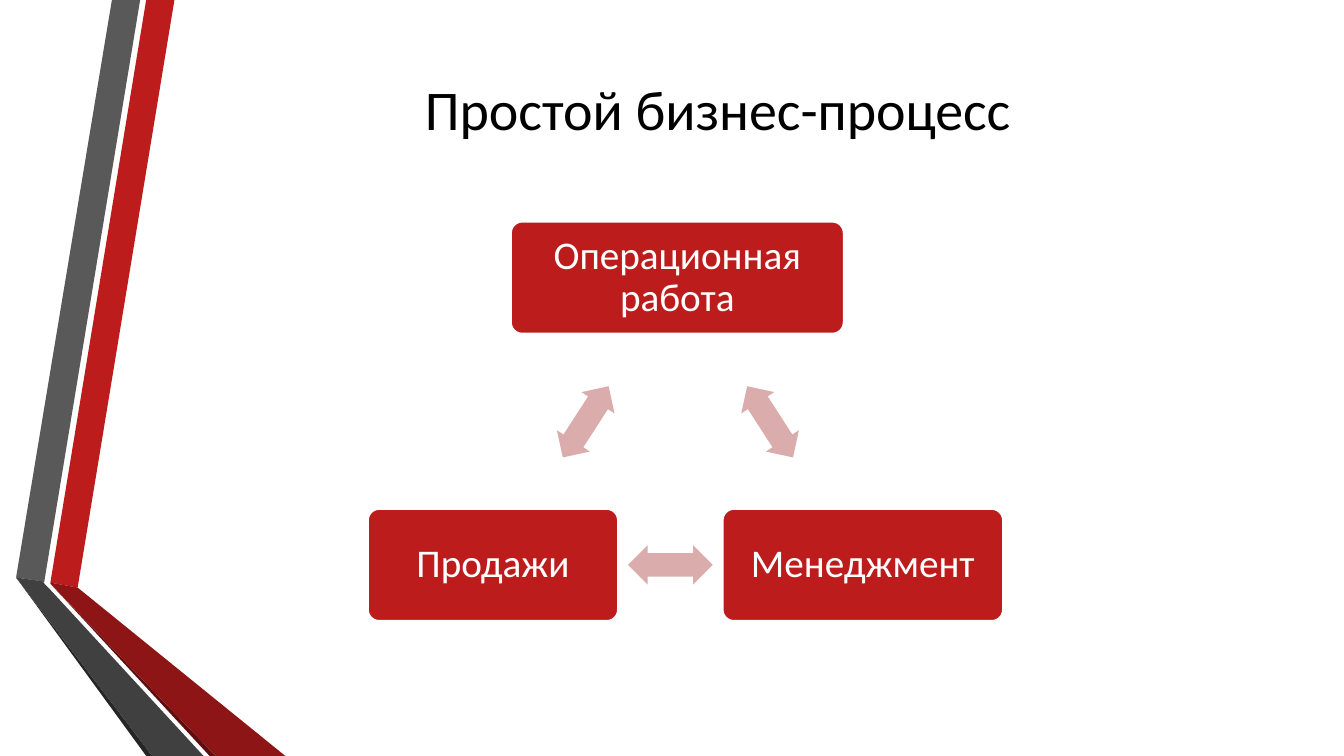
from dataclasses import dataclass

import pptx
import pptx.dml.color
import pptx.enum.shapes
import pptx.enum.text
import pptx.util

SHAPES = pptx.enum.shapes.MSO_SHAPE
SLIDE_WIDTH = pptx.util.Inches(13.333)
SLIDE_HEIGHT = pptx.util.Inches(7.5)


@dataclass(frozen=True)
class Theme:
    font: str = "Calibri"
    title_size: int = 40
    step_size: int = 28
    title_ink: str = "000000"
    white: str = "FFFFFF"
    red: str = "BC1C1C"
    red_fold: str = "8D1515"
    red_shade: str = "5E0E0E"
    gray: str = "595959"
    gray_fold: str = "404040"
    gray_shade: str = "262626"
    arrow: str = "DAACAC"


THEME = Theme()

# Ribbon corners, in percent of the slide's width and height
RIBBON = [
    (THEME.red, [(3.75, 77.07), (5.78, 77.73), (12.98, 0), (10.88, 0)]),
    (THEME.gray, [(10.43, 0), (8.33, 0), (1.2, 76.4), (3.3, 76.93)]),
    (THEME.gray_shade, [(1.2, 76.4), (10.88, 100), (11.33, 100)]),
    (THEME.red_shade, [(3.75, 77.2), (15.6, 100), (16.05, 100)]),
    (THEME.red_fold, [(3.75, 77.07), (3.75, 77.2), (16.05, 100), (21.23, 100), (5.78, 77.73)]),
    (THEME.gray_fold, [(15.15, 100), (3.6, 77.73), (3.23, 77.07), (3.3, 76.93),
                       (1.2, 76.4), (11.33, 100)]),
]

# Process layout, in percent: shared rows, sizes and the triangle's axis
TOP_ROW, ARROW_ROW, BOTTOM_ROW = 36.73, 55.8, 74.73
STEP_HEIGHT = 14.8
ARROW_SIZE = (6.3, 5.2)
ARROW_TILT = 57.2
STEPS = [
    ("Операционная работа", 50.4, TOP_ROW, 24.75),
    ("Менеджмент", 64.2, BOTTOM_ROW, 20.85),
    ("Продажи", 36.68, BOTTOM_ROW, 18.6),
]
LINKS = [
    (57.3, ARROW_ROW, ARROW_TILT),
    (49.88, BOTTOM_ROW, 180),
    (43.58, ARROW_ROW, 360 - ARROW_TILT),
]


def across(percent):
    return round(SLIDE_WIDTH * percent / 100)


def down(percent):
    return round(SLIDE_HEIGHT * percent / 100)


def centered(x, y, width, height):
    """Frame around a centre point, all in percent of the slide."""
    return across(x - width / 2), down(y - height / 2), across(width), down(height)


def paint(shape, color):
    shape.shadow.inherit = False
    shape.fill.solid()
    shape.fill.fore_color.rgb = pptx.dml.color.RGBColor.from_string(color)
    shape.line.fill.background()


def write(frame, words, size, color):
    frame.word_wrap = True
    frame.vertical_anchor = pptx.enum.text.MSO_ANCHOR.MIDDLE
    paragraph = frame.paragraphs[0]
    paragraph.text = words
    paragraph.alignment = pptx.enum.text.PP_ALIGN.CENTER
    paragraph.font.name = THEME.font
    paragraph.font.size = pptx.util.Pt(size)
    paragraph.font.color.rgb = pptx.dml.color.RGBColor.from_string(color)
    return paragraph


def add_band(slide, color, corners):
    start, *others = [(across(x), down(y)) for x, y in corners]
    outline = slide.shapes.build_freeform(*start)
    outline.add_line_segments(others, close=True)
    paint(outline.convert_to_shape(), color)


def add_title(slide, words):
    title = slide.shapes.add_textbox(*centered(53.4, 14.33, 82.2, 18))
    write(title.text_frame, words, THEME.title_size, THEME.title_ink)


def add_step(slide, words, x, y, width):
    step = slide.shapes.add_shape(SHAPES.ROUNDED_RECTANGLE, *centered(x, y, width, STEP_HEIGHT))
    step.adjustments[0] = 0.1
    paint(step, THEME.red)
    step.line.color.rgb = pptx.dml.color.RGBColor.from_string(THEME.white)
    step.line.width = pptx.util.Pt(1.25)
    frame = step.text_frame
    frame.margin_left = frame.margin_right = across(1.1)
    frame.margin_top = frame.margin_bottom = down(2)
    write(frame, words, THEME.step_size, THEME.white).line_spacing = 0.9


def add_link(slide, x, y, angle):
    link = slide.shapes.add_shape(SHAPES.LEFT_RIGHT_ARROW, *centered(x, y, *ARROW_SIZE))
    link.adjustments[0] = 0.6
    link.adjustments[1] = 0.5
    link.rotation = angle
    paint(link, THEME.arrow)


def main():
    deck = pptx.Presentation()
    deck.slide_width, deck.slide_height = SLIDE_WIDTH, SLIDE_HEIGHT
    slide = deck.slides.add_slide(deck.slide_layouts[6])

    # Folded ribbon on the left
    for color, corners in RIBBON:
        add_band(slide, color, corners)

    add_title(slide, "Простой бизнес-процесс")

    # Three steps and the two-way links between them
    for step in STEPS:
        add_step(slide, *step)
    for link in LINKS:
        add_link(slide, *link)

    deck.save("out.pptx")


if __name__ == "__main__":
    main()
